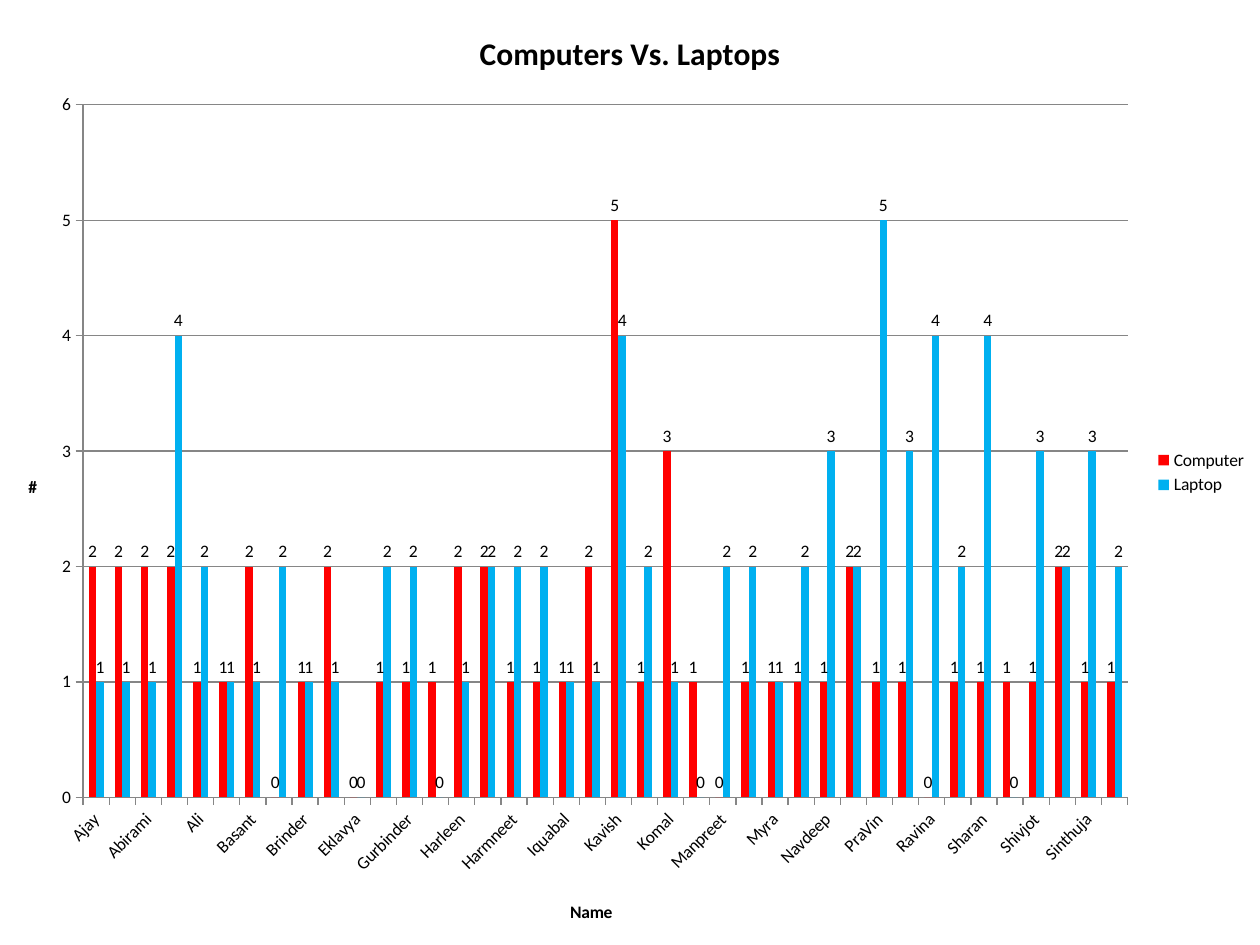
from typing import NamedTuple

from lxml import etree
from pptx import Presentation
from pptx import util as u
from pptx.chart.data import CategoryChartData
from pptx.dml.color import RGBColor
from pptx.enum import chart as ch
from pptx.oxml.ns import qn

BLACK = RGBColor(0, 0, 0)
GRAY = RGBColor(0x86, 0x86, 0x86)
RED = RGBColor(0xFF, 0, 0)
BLUE = RGBColor(0, 0xB0, 0xF0)


class Device(NamedTuple):
    name: str
    color: RGBColor
    counts: list[int]


NAMES = """Ajay Aadish Abirami Adil Ali Amandeep Basant Bhawandeep Brinder Cameron
Eklavya Esteban Gurbinder Gurtej Harleen Harleen Harmneet Hina Iquabal Jay
Kavish Kinesa Komal Manjot Manpreet Mr.Harrison Myra Nardeep Navdeep Paramvir
PraVin Raman Ravina Savreet Sharan Shelly Shivjot Simi Sinthuja Sukhraj""".split()

DEVICES = [
    Device("Computer", RED, [2, 2, 2, 2, 1, 1, 2, 0, 1, 2, 0, 1, 1, 1, 2, 2, 1, 1, 1, 2,
                             5, 1, 3, 1, 0, 1, 1, 1, 1, 2, 1, 1, 0, 1, 1, 1, 1, 2, 1, 1]),
    Device("Laptop", BLUE, [1, 1, 1, 4, 2, 1, 1, 2, 1, 1, 0, 2, 2, 0, 1, 2, 2, 2, 1, 1,
                            4, 2, 1, 0, 2, 2, 1, 2, 3, 2, 5, 3, 4, 2, 4, 0, 3, 2, 3, 2]),
]


def set_font(font, size: float, bold: bool = False) -> None:
    style = {"name": "Calibri", "size": u.Pt(size), "bold": bold}
    for key, value in style.items():
        setattr(font, key, value)
    font.color.rgb = BLACK


def place(parent, index: int, **fractions: float) -> None:
    """Give a chart part a manual layout in fractions of the chart area."""
    for old in parent.findall(qn("c:layout")):
        parent.remove(old)
    layout = etree.Element(qn("c:layout"))
    manual = etree.SubElement(layout, qn("c:manualLayout"))
    settings = {"xMode": "edge", "yMode": "edge", **fractions}
    if "w" in fractions:
        settings = {"layoutTarget": "inner", **settings}
    for key, value in settings.items():
        etree.SubElement(manual, qn(f"c:{key}")).set("val", str(value))
    parent.insert(index, layout)


def write_title(title, words: str, size: float) -> None:
    p = title.text_frame.paragraphs[0]
    r = p.add_run()
    r.text = words
    set_font(r.font, size, bold=True)


def style_axis(axis, words: str, x: float, y: float) -> None:
    axis.major_tick_mark = ch.XL_TICK_MARK.OUTSIDE
    axis.format.line.color.rgb = GRAY
    axis.format.line.width = u.Pt(0.75)
    set_font(axis.tick_labels.font, 10)
    title = axis.axis_title
    write_title(title, words, 10)
    title.text_frame._txBody.bodyPr.set("rot", "0")
    place(title._element, 1, x=x, y=y)


def add_device_chart(s) -> None:
    data = CategoryChartData(number_format="General")
    data.categories = NAMES
    for device in DEVICES:
        data.add_series(device.name, device.counts)
    chart = s.shapes.add_chart(ch.XL_CHART_TYPE.COLUMN_CLUSTERED, 0, 0,
                               u.Cm(25.4), u.Cm(19.05), data).chart
    set_font(chart.font, 10)
    chart.has_title = True
    write_title(chart.chart_title, "Computers Vs. Laptops", 18)
    chart.has_legend = True
    chart.legend.position = ch.XL_LEGEND_POSITION.RIGHT
    chart.legend.include_in_layout = False
    set_font(chart.legend.font, 10)

    style_axis(chart.category_axis, "Name", 0.45, 0.95)
    axis = chart.value_axis
    style_axis(axis, "#", 0.02, 0.5)
    axis.minimum_scale, axis.maximum_scale, axis.major_unit = 0, 6, 1
    axis.major_gridlines.format.line.color.rgb = GRAY
    axis.major_gridlines.format.line.width = u.Pt(0.75)

    plot = chart.plots[0]
    plot.vary_by_categories = False
    plot.gap_width, plot.overlap = 150, 0
    for series, device in zip(plot.series, DEVICES):
        series.format.fill.solid()
        series.format.fill.fore_color.rgb = device.color
        labels = series.data_labels
        labels.show_value = True
        labels.position = ch.XL_LABEL_POSITION.OUTSIDE_END
        set_font(labels.font, 10)
    area = chart.element.find(".//" + qn("c:plotArea")) if hasattr(chart, "element") \
        else chart._chartSpace.find(".//" + qn("c:plotArea"))
    place(area, 0, x=0.066, y=0.111, w=0.829, h=0.733)


def main() -> None:
    prs = Presentation()
    prs.slide_width, prs.slide_height = u.Cm(25.4), u.Cm(19.05)
    add_device_chart(prs.slides.add_slide(prs.slide_layouts[6]))
    prs.save("out.pptx")


if __name__ == "__main__":
    main()
